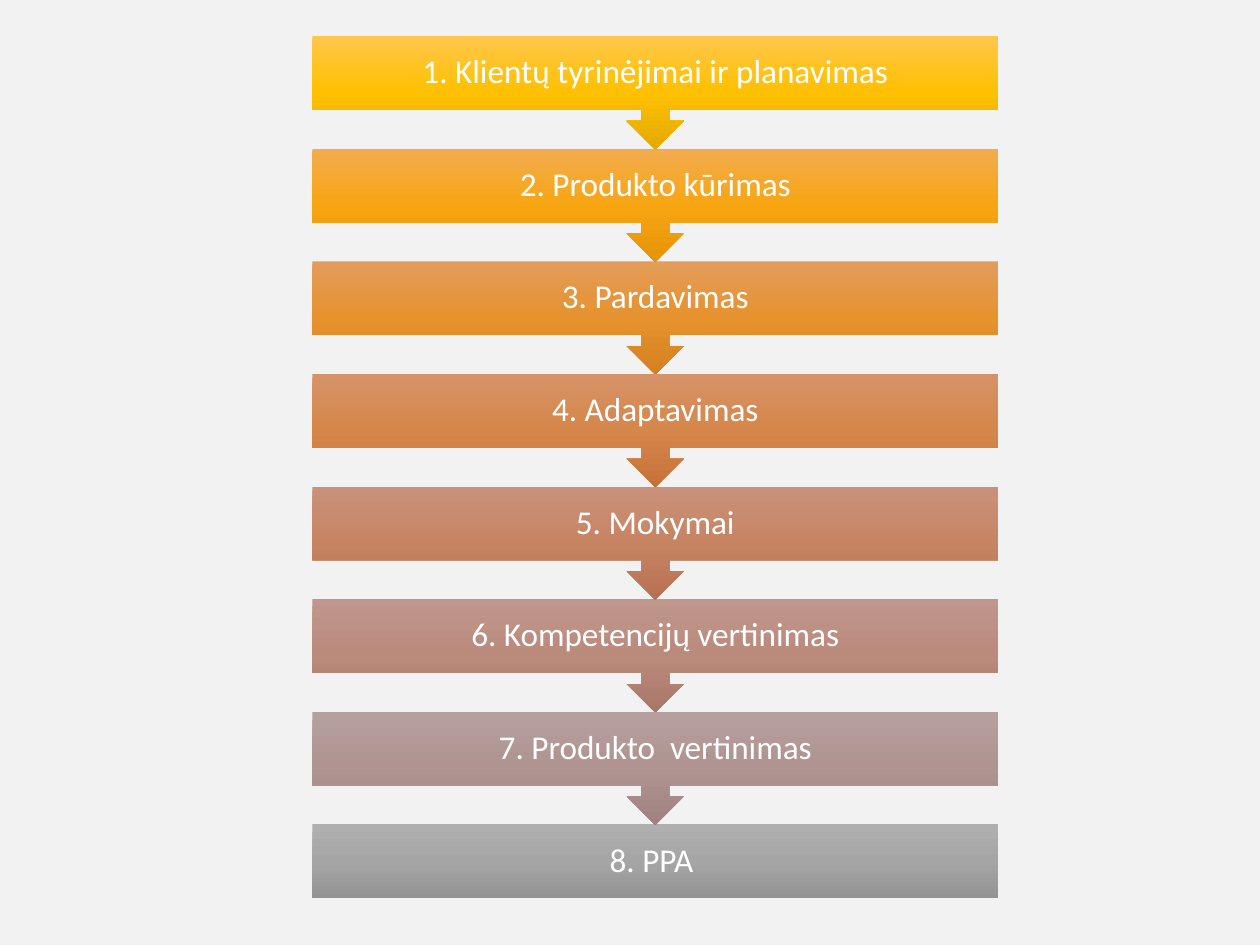
import lxml.etree
import pptx
import pptx.dml.color
import pptx.enum.shapes
import pptx.enum.text
import pptx.oxml.ns
import pptx.util

Cm = pptx.util.Cm
Kind = pptx.enum.shapes.MSO_SHAPE

HUES = {"back": "F2F2F2", "text": "FFFFFF"}

# Each step: text, then its top, middle and bottom shade
STEPS = [
    ("1. Klientų tyrinėjimai ir planavimas", ("FFC74B", "FFC000", "E3AA00")),
    ("2. Produkto kūrimas", ("F2AC4F", "F8A512", "E59407")),
    ("3. Pardavimas", ("E39C5A", "E6922E", "D68020")),
    ("4. Adaptavimas", ("D69369", "D6864A", "C5723A")),
    ("5. Mokymai", ("C9917B", "C78463", "B67053")),
    ("6. Kompetencijų vertinimas", ("BF978D", "BA8A7B", "A9776A")),
    ("7. Produkto  vertinimas", ("B6A09E", "AF9491", "9D827F")),
    ("8. PPA ", ("AFAFAF", "A5A5A5", "939393")),
]

LEFT, TOP, WIDE = 6.3, 0.73, 13.82
PITCH, BAR, CALL = 2.27, 1.49, 2.28


class Deck:
    """Holds the style and the current slide."""

    def __init__(self, font, size):
        self.font, self.size = font, size
        self.file = pptx.Presentation()
        self.file.slide_width, self.file.slide_height = Cm(25.4), Cm(19.05)
        self.slide = self.file.slides.add_slide(self.file.slide_layouts[6])
        fill = self.slide.background.fill
        fill.solid()
        fill.fore_color.rgb = self.hue(HUES["back"])

    def hue(self, code):
        return pptx.dml.color.RGBColor.from_string(code)

    def shade(self, shape, codes):
        """Fill from top to bottom with evenly spaced colours."""
        shape.fill.gradient()
        shape.fill.gradient_angle = 270
        stops = next(shape.element.iter(pptx.oxml.ns.qn("a:gsLst")))
        for old in list(stops):
            stops.remove(old)
        for i, code in enumerate(codes):
            stop = lxml.etree.SubElement(
                stops, pptx.oxml.ns.qn("a:gs"), pos=str(i * 100000 // (len(codes) - 1)))
            lxml.etree.SubElement(stop, pptx.oxml.ns.qn("a:srgbClr"), val=code)

    def label(self, shape, text):
        frame = shape.text_frame
        frame.word_wrap = True
        frame.vertical_anchor = pptx.enum.text.MSO_ANCHOR.MIDDLE
        frame.margin_left = frame.margin_right = Cm(0.38)
        frame.margin_top = frame.margin_bottom = Cm(0.38)
        para = frame.paragraphs[0]
        para.alignment = pptx.enum.text.PP_ALIGN.CENTER
        para.line_spacing = 0.9
        run = para.add_run()
        run.text = text
        run.font.name, run.font.size = self.font, pptx.util.Pt(self.size)
        run.font.color.rgb = self.hue(HUES["text"])

    def step(self, kind, top, high, text, codes):
        shape = self.slide.shapes.add_shape(
            kind, Cm(LEFT), Cm(top), Cm(WIDE), Cm(high))
        shape.shadow.inherit = False
        shape.line.fill.background()
        self.shade(shape, codes)
        self.label(shape, text)


def main():
    deck = Deck("Calibri", 19)
    last = len(STEPS) - 1
    # Bottom step first, so each arrow tip lies over the bar below it
    for i, (text, codes) in reversed(list(enumerate(STEPS))):
        kind, high = (Kind.RECTANGLE, BAR) if i == last else (Kind.DOWN_ARROW_CALLOUT, CALL)
        deck.step(kind, TOP + i * PITCH, high, text, codes)
    deck.file.save("out.pptx")


if __name__ == "__main__":
    main()
